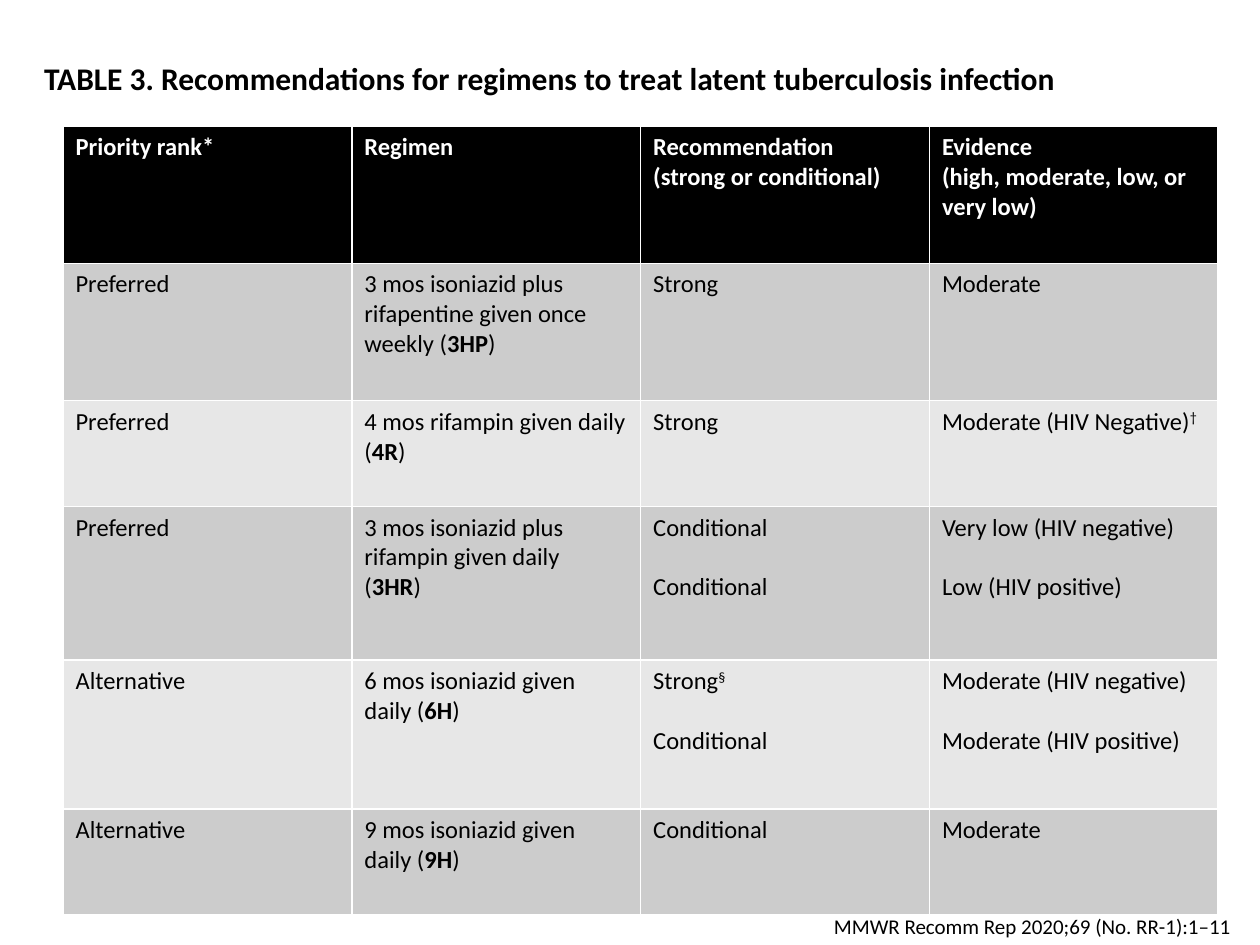
import dataclasses

import pptx
import pptx.dml.color
import pptx.enum.text
import pptx.util

Inches = pptx.util.Inches
Pt = pptx.util.Pt
Color = pptx.dml.color.RGBColor


@dataclasses.dataclass(frozen=True)
class Theme:
    font: str = "Calibri"
    black: Color = Color(0x00, 0x00, 0x00)
    white: Color = Color(0xFF, 0xFF, 0xFF)
    bands: tuple = (Color(0xCC, 0xCC, 0xCC), Color(0xE7, 0xE7, 0xE7))
    title_size: int = 18
    table_size: int = 14
    source_size: int = 12
    line_gap: int = 17


@dataclasses.dataclass(frozen=True)
class Span:
    text: str
    bold: bool = False
    superscript: bool = False


def regimen(description, code):
    return [description, Span("("), Span(code, bold=True), Span(")")]


class SlideBuilder:
    def __init__(self, slide, theme):
        self.slide = slide
        self.theme = theme

    def format_paragraph(self, paragraph, size, color, bold=False):
        font = paragraph.font
        font.name = self.theme.font
        font.size = Pt(size)
        font.bold = bold
        font.color.rgb = color

    def fill_line(self, shape, box, text, size, bold=False):
        """Place a shape and give it one unwrapped, left-aligned line."""
        shape.left, shape.top, shape.width, shape.height = map(Inches, box)
        frame = shape.text_frame
        frame.text = text
        frame.word_wrap = False
        frame.auto_size = pptx.enum.text.MSO_AUTO_SIZE.SHAPE_TO_FIT_TEXT
        frame.vertical_anchor = pptx.enum.text.MSO_ANCHOR.TOP
        paragraph = frame.paragraphs[0]
        paragraph.alignment = pptx.enum.text.PP_ALIGN.LEFT
        self.format_paragraph(paragraph, size, self.theme.black, bold)

    def title(self, box, text):
        self.fill_line(self.slide.shapes.title, box, text, self.theme.title_size, bold=True)

    def source_line(self, box, text):
        shape = self.slide.shapes.add_textbox(*map(Inches, box))
        self.fill_line(shape, box, text, self.theme.source_size)

    def add_spans(self, paragraph, spans):
        for span in spans:
            run = paragraph.add_run()
            run.text = span.text
            if span.bold:
                run.font.bold = True
            if span.superscript:
                run.font._element.set("baseline", "30000")

    def cell(self, cell, paragraphs, fill, color, bold=False, gap=0):
        """Fill a cell; each paragraph is a string or a list of spans."""
        cell.fill.solid()
        cell.fill.fore_color.rgb = fill
        frame = cell.text_frame
        for index, content in enumerate(paragraphs):
            paragraph = frame.add_paragraph() if index else frame.paragraphs[0]
            if isinstance(content, str):
                paragraph.text = content
            else:
                self.add_spans(paragraph, content)
            if index and gap:
                paragraph.space_before = Pt(gap)
            self.format_paragraph(paragraph, self.theme.table_size, color, bold)

    def table(self, box, row_heights, header, rows):
        theme = self.theme
        table = self.slide.shapes.add_table(
            len(rows) + 1, len(header), *map(Inches, box)).table
        for row, height in zip(table.rows, row_heights):
            row.height = Inches(height)
        for column, text in enumerate(header):
            self.cell(table.cell(0, column), [text], theme.black, theme.white, bold=True)
        for row, contents in enumerate(rows, start=1):
            fill = theme.bands[(row - 1) % 2]
            for column, paragraphs in enumerate(contents):
                gap = theme.line_gap if column >= 2 else 0
                self.cell(table.cell(row, column), paragraphs, fill, theme.black, gap=gap)


HEADER = [
    "Priority rank*",
    "Regimen",
    "Recommendation\v(strong or conditional)",
    "Evidence\v(high, moderate, low, or very low)",
]


def regimen_spans(description, code):
    """One paragraph: a description followed by its bold code in parentheses."""
    return [Span(f"{description} ("), Span(code, bold=True), Span(")")]


ROWS = [
    (["Preferred"],
     [regimen_spans("3 mos isoniazid plus rifapentine given once weekly", "3HP")],
     ["Strong"],
     ["Moderate"]),
    (["Preferred"],
     [regimen_spans("4 mos rifampin given daily", "4R")],
     ["Strong"],
     [[Span("Moderate (HIV Negative)"), Span("†", superscript=True)]]),
    (["Preferred"],
     ["3 mos isoniazid plus rifampin given daily",
      [Span("("), Span("3HR", bold=True), Span(")")]],
     ["Conditional", "Conditional"],
     ["Very low (HIV negative)", "Low (HIV positive)"]),
    (["Alternative"],
     [regimen_spans("6 mos isoniazid given daily", "6H")],
     [[Span("Strong"), Span("§", superscript=True)], "Conditional"],
     ["Moderate (HIV negative)", "Moderate (HIV positive)"]),
    (["Alternative"],
     [regimen_spans("9 mos isoniazid given daily", "9H")],
     ["Conditional"],
     ["Moderate"]),
]


def main():
    presentation = pptx.Presentation()
    presentation.slide_width = Inches(10)
    presentation.slide_height = Inches(7.5)
    title_only = presentation.slide_layouts[5]
    builder = SlideBuilder(presentation.slides.add_slide(title_only), Theme())

    builder.table((0.5, 1, 9.17, 6.25), (1.09, 1.09, 0.84, 1.22, 1.18, 0.84), HEADER, ROWS)
    builder.title((0.25, 0.42, 8.29, 0.4),
                  "TABLE 3. Recommendations for regimens to treat latent tuberculosis infection")
    builder.source_line((6.52, 7.2, 3.52, 0.3), "MMWR Recomm Rep 2020;69 (No. RR-1):1–11")
    presentation.save("out.pptx")


if __name__ == "__main__":
    main()
